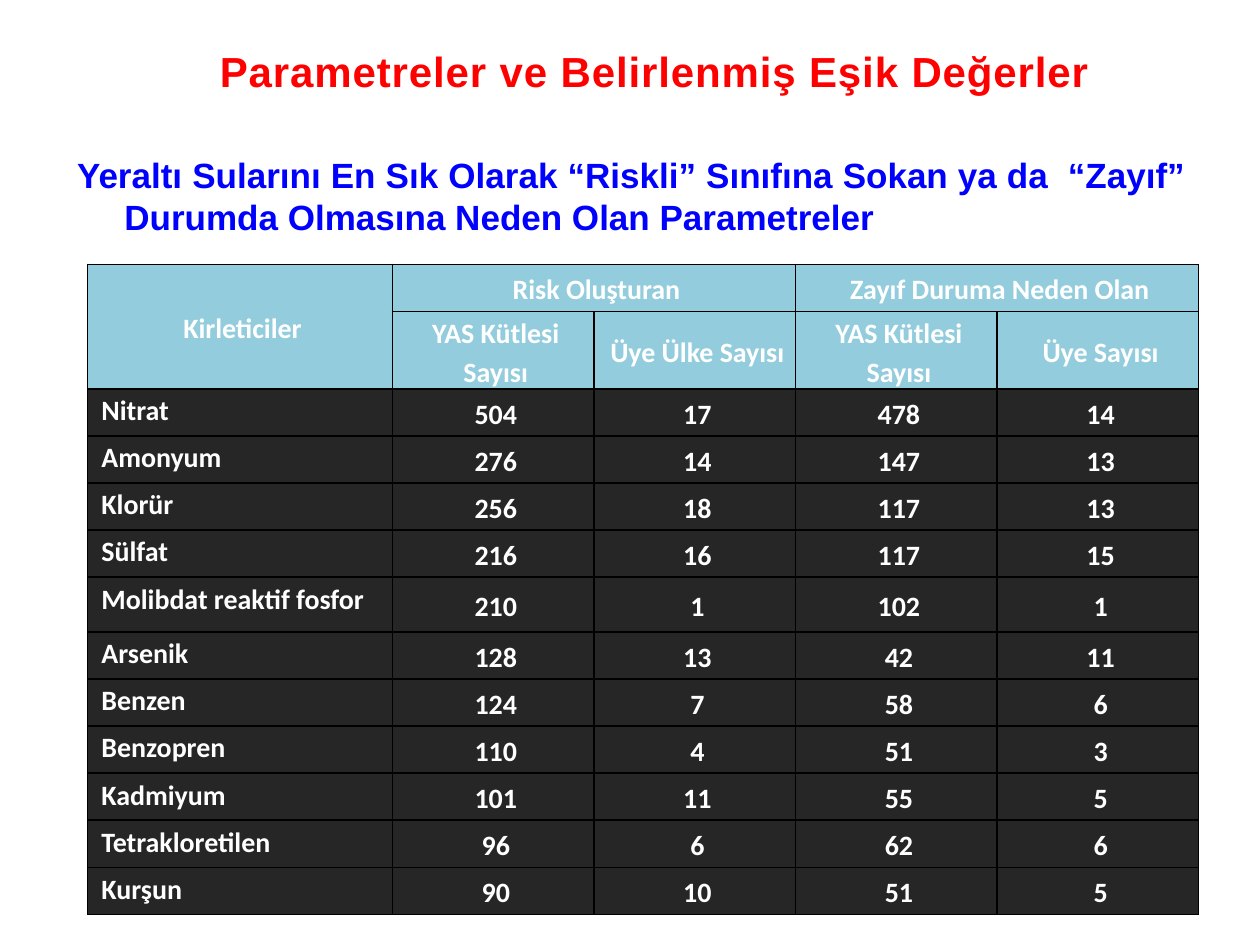
from lxml import etree
from pptx import Presentation
from pptx.dml.color import RGBColor
from pptx.enum.text import MSO_ANCHOR, PP_ALIGN
from pptx.oxml.ns import qn
from pptx.util import Pt

TITLE = "Parametreler ve Belirlenmiş Eşik Değerler"
SUBTITLE = ("Yeraltı Sularını En Sık Olarak “Riskli” Sınıfına Sokan ya da  “Zayıf” "
            "Durumda Olmasına Neden Olan Parametreler")
HEADERS = [
    ("Kirleticiler", "Risk Oluşturan", "", "Zayıf Duruma Neden Olan", ""),
    ("", "YAS Kütlesi Sayısı", "Üye Ülke Sayısı", "YAS Kütlesi Sayısı", "Üye Sayısı"),
]
POLLUTANTS = [
    ("Nitrat", 504, 17, 478, 14),
    ("Amonyum", 276, 14, 147, 13),
    ("Klorür", 256, 18, 117, 13),
    ("Sülfat", 216, 16, 117, 15),
    ("Molibdat reaktif fosfor", 210, 1, 102, 1),
    ("Arsenik", 128, 13, 42, 11),
    ("Benzen", 124, 7, 58, 6),
    ("Benzopren", 110, 4, 51, 3),
    ("Kadmiyum", 101, 11, 55, 5),
    ("Tetrakloretilen", 96, 6, 62, 6),
    ("Kurşun", 90, 10, 51, 5),
]
MERGES = [((0, 0), (1, 0)), ((0, 1), (0, 2)), ((0, 3), (0, 4))]
COLORS = {"title": "FF0000", "subtitle": "0000FF", "header": "93CDDD",
          "body": "262626", "text": "FFFFFF", "border": "000000"}
COL_WIDTHS = [174.2] + [115.2] * 4
ROW_HEIGHT = 26.9
TALL_ROWS = {1: 44.5, 6: 31.4}


def style_paragraph(p, font, size, color, align, spacing=None):
    p.alignment = align
    if spacing:
        p.line_spacing = spacing
    for r in p.runs:
        r.font.name, r.font.size, r.font.bold = font, Pt(size), True
        r.font.color.rgb = RGBColor.from_string(COLORS[color])


def set_indent(p, left, first):
    pPr = p._p.get_or_add_pPr()
    pPr.set("marL", str(Pt(left)))
    pPr.set("indent", str(Pt(first)))


def add_borders(cell):
    tcPr = cell._tc.get_or_add_tcPr()
    for i, side in enumerate(("lnL", "lnR", "lnT", "lnB")):
        ln = etree.Element(qn("a:" + side), w=str(Pt(1)))
        fill = etree.SubElement(ln, qn("a:solidFill"))
        etree.SubElement(fill, qn("a:srgbClr"), val=COLORS["border"])
        tcPr.insert(i, ln)


def format_cell(cell, value, is_header, is_label):
    cell.text = str(value)
    cell.margin_left = cell.margin_right = Pt(5)
    cell.margin_top = cell.margin_bottom = 0
    cell.vertical_anchor = MSO_ANCHOR.TOP if is_label else MSO_ANCHOR.MIDDLE
    cell.fill.solid()
    cell.fill.fore_color.rgb = RGBColor.from_string(COLORS["header" if is_header else "body"])
    p = cell.text_frame.paragraphs[0]
    style_paragraph(p, "Calibri", 16, "text",
                    PP_ALIGN.JUSTIFY if is_label else PP_ALIGN.CENTER, 1.15)
    set_indent(p, 3, 0)
    add_borders(cell)


def add_title(s):
    title = s.shapes.title
    title.left, title.top, title.width, title.height = Pt(28), Pt(15), Pt(692), Pt(45.5)
    tf = title.text_frame
    tf.text = TITLE
    tf.vertical_anchor = MSO_ANCHOR.MIDDLE
    p = tf.paragraphs[0]
    style_paragraph(p, "Arial", 24, "title", PP_ALIGN.CENTER, 1.2)
    p.runs[0].font._element.set("spc", "50")


def add_subtitle(s):
    tf = s.shapes.add_textbox(Pt(37), Pt(84), Pt(648), Pt(62.5)).text_frame
    tf.word_wrap = True
    tf.text = SUBTITLE
    p = tf.paragraphs[0]
    style_paragraph(p, "Arial", 20, "subtitle", PP_ALIGN.JUSTIFY)
    set_indent(p, 27, -27)


def add_pollutant_table(s):
    rows = HEADERS + POLLUTANTS
    heights = [TALL_ROWS.get(i, ROW_HEIGHT) for i in range(len(rows))]
    table = s.shapes.add_table(len(rows), len(COL_WIDTHS), Pt(50), Pt(151),
                               Pt(sum(COL_WIDTHS)), Pt(sum(heights))).table
    for column, width in zip(table.columns, COL_WIDTHS):
        column.width = Pt(width)
    for i, (row, height) in enumerate(zip(rows, heights)):
        table.rows[i].height = Pt(height)
        is_header = i < len(HEADERS)
        for j, value in enumerate(row):
            format_cell(table.cell(i, j), value, is_header, j == 0 and not is_header)
    for first, last in MERGES:
        table.cell(*first).merge(table.cell(*last))


def main():
    prs = Presentation()
    prs.slide_width, prs.slide_height = Pt(720), Pt(540)
    s = prs.slides.add_slide(prs.slide_layouts[5])
    add_title(s)
    add_subtitle(s)
    add_pollutant_table(s)
    prs.save("out.pptx")


if __name__ == "__main__":
    main()
